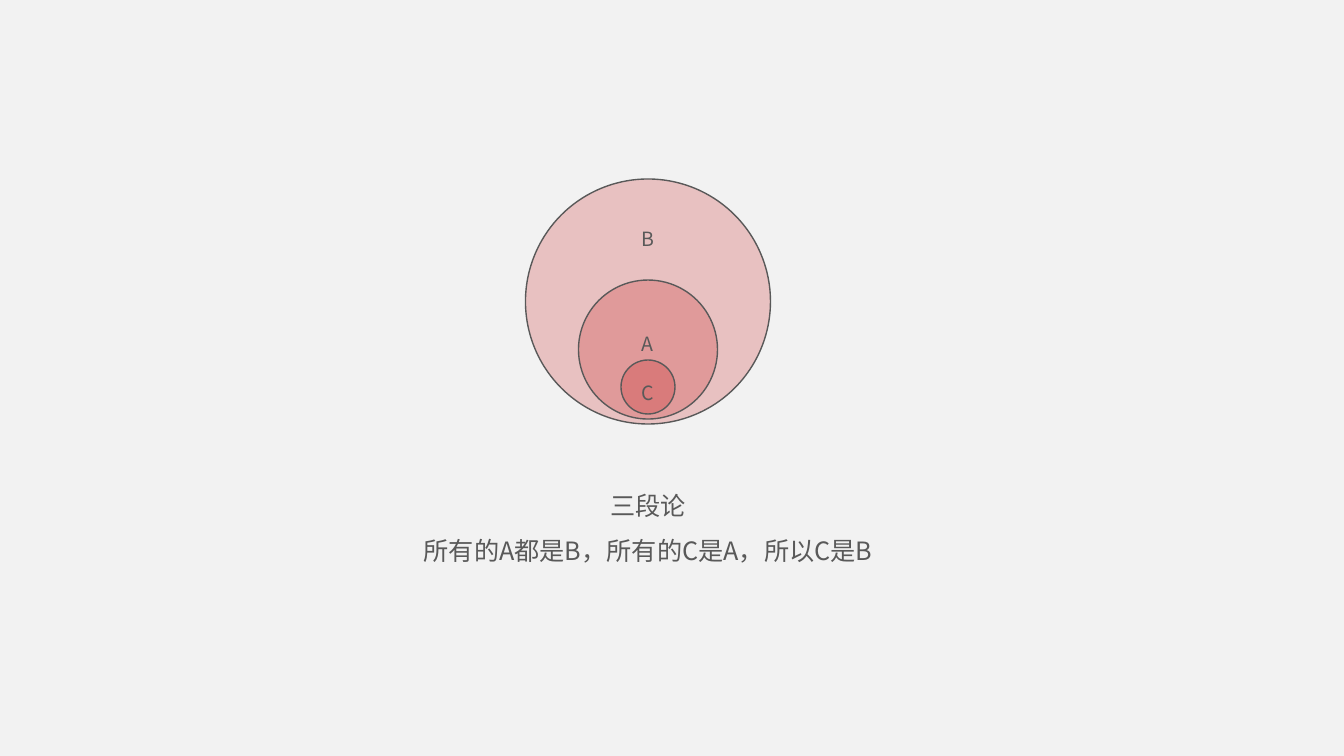
import pptx
import pptx.util
import pptx.dml.color
import pptx.enum.shapes
import pptx.enum.text
import pptx.oxml.ns
from lxml import etree

RGBColor = pptx.dml.color.RGBColor
BACKGROUND = RGBColor(0xF2, 0xF2, 0xF2)
RED = RGBColor(0xC0, 0x00, 0x00)
GRAY = RGBColor(0x59, 0x59, 0x59)
FONT = "Noto Sans CJK SC"
EMU_PER_INCH = 914400
PX_PER_INCH = 100.8
CENTER_X = 648


def px(n):
    return pptx.util.Emu(round(n * EMU_PER_INCH / PX_PER_INCH))


def add_circle(slide, top, diameter, opacity=20):
    sp = slide.shapes.add_shape(
        pptx.enum.shapes.MSO_SHAPE.OVAL,
        px(CENTER_X - diameter / 2), px(top), px(diameter), px(diameter))
    sp.shadow.inherit = False
    sp.fill.solid()
    sp.fill.fore_color.rgb = RED
    color = sp.fill._xPr.find(".//" + pptx.oxml.ns.qn("a:srgbClr"))
    alpha = etree.SubElement(color, pptx.oxml.ns.qn("a:alpha"))
    alpha.set("val", str(opacity * 1000))
    sp.line.color.rgb = GRAY
    sp.line.width = pptx.util.Pt(1)


def add_text(slide, text, *, top, width, height, size):
    sp = slide.shapes.add_textbox(
        px(CENTER_X - width / 2), px(top), px(width), px(height))
    tf = sp.text_frame
    tf.word_wrap = True
    tf.auto_size = pptx.enum.text.MSO_AUTO_SIZE.SHAPE_TO_FIT_TEXT
    for i, line in enumerate(text.split("\n")):
        p = tf.add_paragraph() if i else tf.paragraphs[0]
        p.alignment = pptx.enum.text.PP_ALIGN.CENTER
        p.line_spacing = 1.5
        r = p.add_run()
        r.text = line
        r.font.size = pptx.util.Pt(size)
        r.font.name = FONT
        r.font.color.rgb = GRAY
        ea = etree.SubElement(r.font._element, pptx.oxml.ns.qn("a:ea"))
        ea.set("typeface", FONT)


def main():
    prs = pptx.Presentation()
    prs.slide_width, prs.slide_height = px(1344), px(756)
    slide = prs.slides.add_slide(prs.slide_layouts[6])
    slide.background.fill.solid()
    slide.background.fill.fore_color.rgb = BACKGROUND

    for top, diameter in [(179, 245), (280, 139), (360, 54)]:
        add_circle(slide, top, diameter)
    for label, top in [("B", 210), ("A", 315), ("C", 364)]:
        add_text(slide, label, top=top, width=87, height=41, size=14)
    add_text(slide, "三段论\n所有的A都是B，所有的C是A，所以C是B",
             top=470, width=487, height=97, size=18)

    prs.save("out.pptx")


if __name__ == "__main__":
    main()
